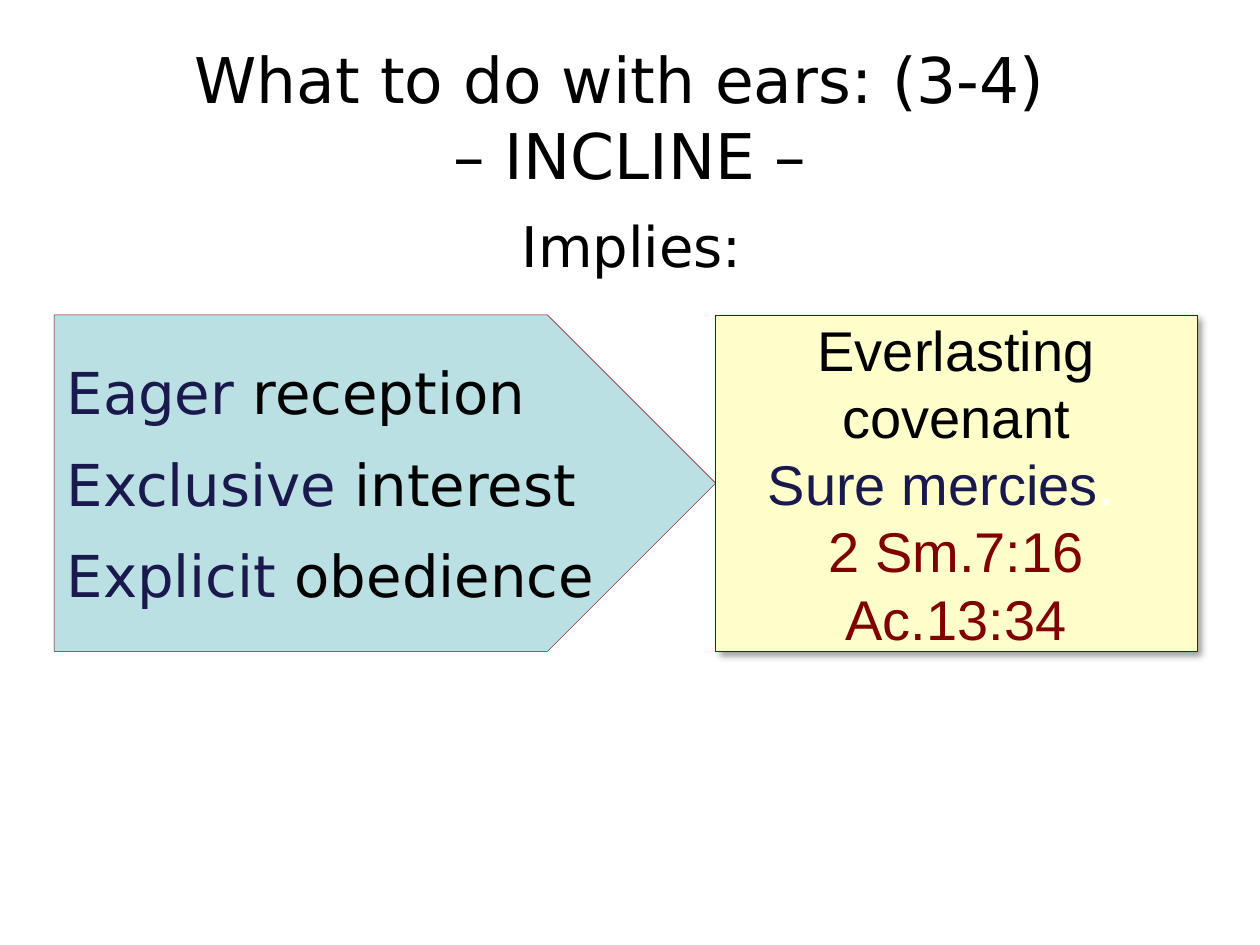
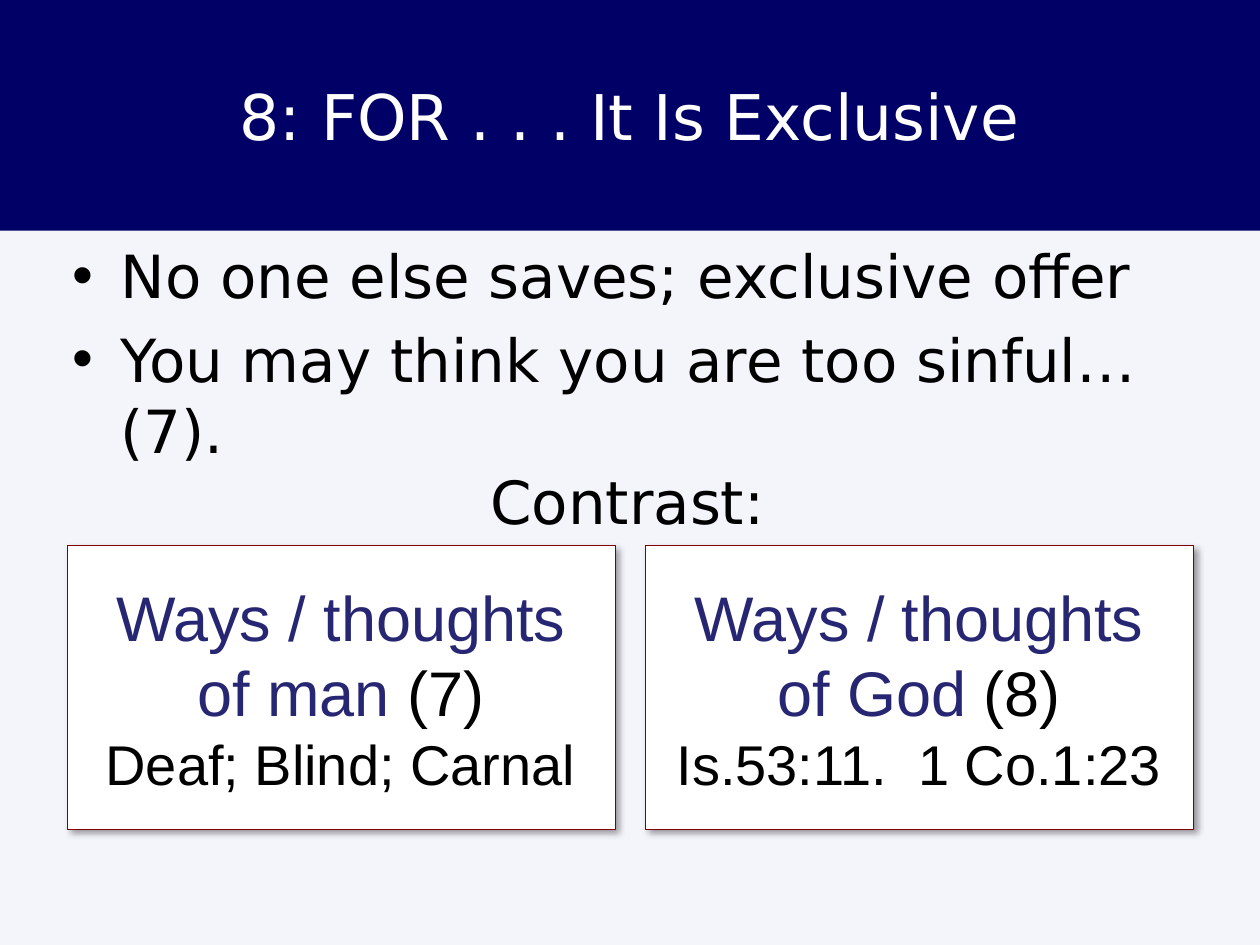
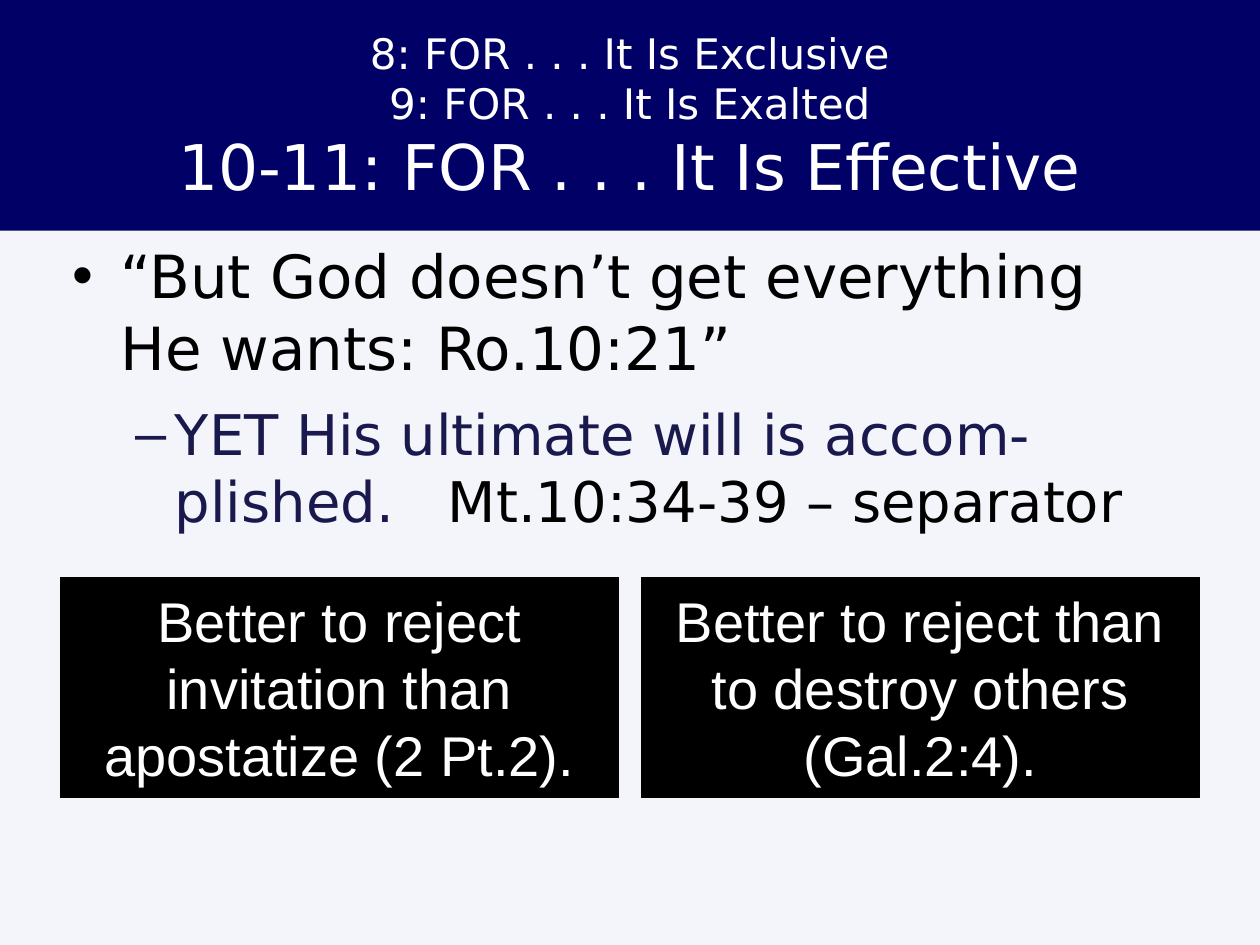
from dataclasses import dataclass

from lxml import etree
from pptx import Presentation
from pptx.dml.color import RGBColor
from pptx.enum import shapes, text
from pptx.oxml import ns
from pptx.util import Inches, Pt

BLACK = RGBColor(0x00, 0x00, 0x00)
WHITE = RGBColor(0xFF, 0xFF, 0xFF)
BAND = RGBColor(0x00, 0x00, 0x66)
PALE_LILAC = RGBColor(0xF4, 0xF4, 0xFB)
PALE_TEAL = RGBColor(0xBB, 0xE0, 0xE3)
CREAM = RGBColor(0xFF, 0xFF, 0xCC)
MAROON = RGBColor(0x80, 0x00, 0x00)
NAVY = RGBColor(0x19, 0x19, 0x4D)
INDIGO = RGBColor(0x26, 0x26, 0x73)

HEADING_FONT = "DejaVu Sans"
CARD_FONT = "Arial"
TITLE_ONLY = 5
SLIDE_WIDTH = 10
BAND_BOX = (0, 0, SLIDE_WIDTH, 1.83)
CENTER = text.PP_ALIGN.CENTER
LEFT = text.PP_ALIGN.LEFT


@dataclass
class Paragraph:
    """Runs are (text, size, colour); indent is (left margin, first line)."""
    runs: list
    align: text.PP_ALIGN = CENTER
    before: float = 0
    after: float = 0
    bullet: str = ""
    indent: tuple = (0, 0)
    level: int = 0


def add_runs(paragraph, runs, font_name):
    for words, size, color in runs:
        for number, line in enumerate(words.split("\n")):
            if number:
                paragraph.add_line_break()
            if not line:
                continue
            run = paragraph.add_run()
            run.text = line
            run.font.name = font_name
            run.font.size = Pt(size)
            run.font.color.rgb = color


def add_bullet(paragraph, character, indent):
    properties = paragraph._p.get_or_add_pPr()
    properties.set("marL", str(Inches(indent[0])))
    properties.set("indent", str(Inches(indent[1])))
    font = etree.SubElement(properties, ns.qn("a:buFont"))
    font.set("typeface", CARD_FONT)
    etree.SubElement(properties, ns.qn("a:buChar")).set("char", character)


def fill_text(shape, paragraphs, font_name, anchor=text.MSO_ANCHOR.MIDDLE):
    frame = shape.text_frame
    frame.word_wrap = True
    frame.auto_size = text.MSO_AUTO_SIZE.NONE
    frame.vertical_anchor = anchor
    for number, content in enumerate(paragraphs):
        paragraph = frame.add_paragraph() if number else frame.paragraphs[0]
        paragraph.alignment = content.align
        paragraph.level = content.level
        paragraph.space_before = Pt(content.before)
        paragraph.space_after = Pt(content.after)
        if content.bullet:
            add_bullet(paragraph, content.bullet, content.indent)
        add_runs(paragraph, content.runs, font_name)


def add_slide(presentation, background, title_box, title_runs, title_fill=None):
    slide = presentation.slides.add_slide(presentation.slide_layouts[TITLE_ONLY])
    slide.background.fill.solid()
    slide.background.fill.fore_color.rgb = background
    title = slide.shapes.title
    title.left, title.top, title.width, title.height = map(Inches, title_box)
    if title_fill is not None:
        title.fill.solid()
        title.fill.fore_color.rgb = title_fill
    fill_text(title, [Paragraph(title_runs)], HEADING_FONT)
    return slide


def add_banded_slide(presentation, title_runs):
    return add_slide(presentation, PALE_LILAC, BAND_BOX, title_runs, BAND)


def add_body(slide, box, paragraphs):
    body = slide.shapes.add_textbox(*map(Inches, box))
    fill_text(body, paragraphs, HEADING_FONT, text.MSO_ANCHOR.TOP)


def add_shadow(shape):
    effects = shape._element.spPr.find(ns.qn("a:effectLst"))
    shadow = etree.SubElement(
        effects, ns.qn("a:outerShdw"), blurRad=str(Pt(4)), dist=str(Pt(3)),
        dir=str(45 * 60000), algn="tl", rotWithShape="0")
    color = etree.SubElement(shadow, ns.qn("a:srgbClr"), val=str(BLACK))
    etree.SubElement(color, ns.qn("a:alpha"), val="40000")


def add_panel(slide, box, paragraphs, fill, line=MAROON, font_name=CARD_FONT,
              kind=shapes.MSO_SHAPE.RECTANGLE, shadow=False):
    panel = slide.shapes.add_shape(kind, *map(Inches, box))
    panel.shadow.inherit = False
    panel.fill.solid()
    panel.fill.fore_color.rgb = fill
    panel.line.color.rgb = line
    panel.line.width = Pt(0.25)
    if shadow:
        add_shadow(panel)
    fill_text(panel, paragraphs, font_name)


def add_panel_pair(slide, left_box, contents, **style):
    """Place two panels as mirror images about the slide's centre."""
    left, top, width, height = left_box
    for panel_left, paragraphs in zip((left, SLIDE_WIDTH - left - width), contents):
        add_panel(slide, (panel_left, top, width, height), paragraphs, **style)


def build_incline(presentation):
    slide = add_slide(presentation, WHITE, (0.5, 0.3, 9, 1.25),
                      [("What to do with ears: (3-4) \n– INCLINE –", 36, BLACK)])
    add_body(slide, (0.43, 1.63, 9.17, 5.45),
             [Paragraph([("Implies:", 32, BLACK)], after=6)])
    phrases = [("Eager", " reception"), ("Exclusive", " interest"),
               ("Explicit", " obedience")]
    responses = [
        Paragraph([(key, 33, NAVY), (rest, 33, BLACK)], LEFT,
                  before=6.6 if number else 0, after=6)
        for number, (key, rest) in enumerate(phrases)]
    add_panel(slide, (0.43, 2.5, 5.25, 2.67), responses, PALE_TEAL,
              font_name=HEADING_FONT, kind=shapes.MSO_SHAPE.PENTAGON)
    covenant = [
        Paragraph([("Everlasting covenant\n", 32, BLACK),
                   ("Sure mercies", 32, NAVY), (".  ", 32, WHITE)]),
        Paragraph([("2 Sm.7:16", 32, MAROON)]),
        Paragraph([("Ac.13:34", 32, MAROON)])]
    add_panel(slide, (5.68, 2.5, 3.82, 2.67), covenant, CREAM, shadow=True)


def build_exclusive(presentation):
    slide = add_banded_slide(presentation,
                             [("8: FOR . . . It Is Exclusive", 36, WHITE)])
    hanging = (0.38, -0.38)
    add_body(slide, (0.48, 1.85, 9, 5.31), [
        Paragraph([("No one else saves; exclusive offer", 34, BLACK)], LEFT,
                  bullet="•", indent=hanging),
        Paragraph([("You may think you are too sinful… (7).", 34, BLACK)], LEFT,
                  before=6.8, bullet="•", indent=hanging),
        Paragraph([("Contrast:", 34, BLACK)])])
    contrasts = [("man", "(7)", "Deaf; Blind; Carnal"),
                 ("God", "(8)", "Is.53:11.  1 Co.1:23")]
    cards = [
        [Paragraph([(f"Ways / thoughts\nof {who} ", 36, INDIGO),
                    (verse, 36, BLACK)]),
         Paragraph([(detail, 32, BLACK)])]
        for who, verse, detail in contrasts]
    add_panel_pair(slide, (0.53, 4.33, 4.35, 2.25), cards, fill=WHITE, shadow=True)


def build_effective(presentation):
    slide = add_banded_slide(presentation, [
        ("8: FOR . . . It Is Exclusive\n9: FOR . . . It Is Exalted\n", 24, WHITE),
        ("10-11: FOR . . . It Is Effective", 36, WHITE)])
    add_body(slide, (0.48, 1.85, 9, 5.48), [
        Paragraph([("“But God doesn’t get everything He wants: Ro.10:21”",
                    34, BLACK)],
                  LEFT, after=6, bullet="•", indent=(0.38, -0.38)),
        Paragraph([("YET His ultimate will is accom-plished.   ", 32, NAVY),
                   ("Mt.10:34-39 – separator", 32, BLACK)],
                  LEFT, before=4, bullet="–", indent=(0.81, -0.31), level=1)])
    warnings = ["Better to reject invitation than apostatize (2 Pt.2).",
                "Better to reject than to destroy others (Gal.2:4)."]
    cards = [[Paragraph([(warning, 32, WHITE)])] for warning in warnings]
    add_panel_pair(slide, (0.48, 4.58, 4.43, 1.75), cards, fill=BLACK, line=BLACK)


def main():
    presentation = Presentation()
    presentation.slide_width = Inches(SLIDE_WIDTH)
    presentation.slide_height = Inches(7.5)
    build_incline(presentation)
    build_exclusive(presentation)
    build_effective(presentation)
    presentation.save("out.pptx")


if __name__ == "__main__":
    main()
